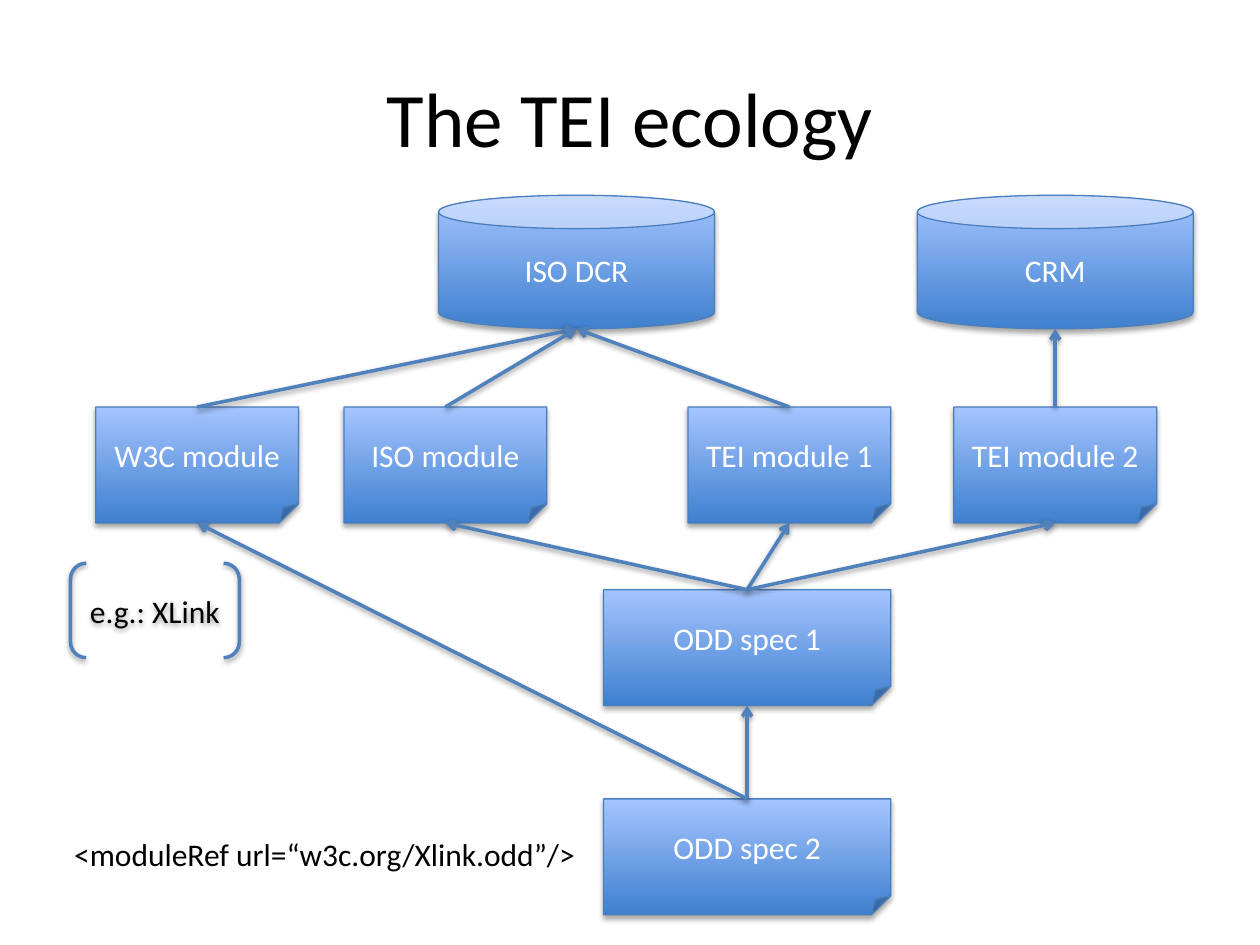
from lxml import etree
from pptx import Presentation
from pptx import util as u
from pptx.dml.color import RGBColor
from pptx.enum import shapes, text
from pptx.oxml.ns import qn

COLS, ROWS = 100, 75
CELL = u.Inches(0.1)


def rgb(value):
    return RGBColor.from_string(value)


def grid(cells):
    return u.Emu(round(cells * CELL))


class Diagram:
    font, ink, light = "Calibri", "000000", "FFFFFF"
    gradient = ("3F80CE", "A4C4FF")
    edge, accent = "4B7EBC", "4F81BD"

    def __init__(self, prs):
        self.s = prs.slides.add_slide(prs.slide_layouts[6])

    def set_text(self, sp, words, size=18, color=ink, align=text.PP_ALIGN.CENTER,
                 anchor=text.MSO_ANCHOR.MIDDLE, wrap=True):
        tf = sp.text_frame
        tf.word_wrap, tf.vertical_anchor = wrap, anchor
        p = tf.paragraphs[0]
        p.alignment = align
        r = p.add_run()
        r.text = words
        for name, value in {"name": self.font, "size": u.Pt(size)}.items():
            setattr(r.font, name, value)
        r.font.color.rgb = rgb(color)

    def stroke(self, sp, color, width):
        sp.line.color.rgb = rgb(color)
        sp.line.width = u.Pt(width)

    def shadow(self, sp, distance, opacity):
        """Give the shape a soft shadow straight below it."""
        sp_pr = sp._element.spPr
        effects = sp_pr.find(qn("a:effectLst"))
        if effects is None:
            effects = etree.SubElement(sp_pr, qn("a:effectLst"))
        outer = etree.SubElement(effects, qn("a:outerShdw"), blurRad="40000",
                                 dist=str(distance), dir="5400000", rotWithShape="0")
        color = etree.SubElement(outer, qn("a:srgbClr"), val=self.ink)
        etree.SubElement(color, qn("a:alpha"), val=str(opacity * 1000))

    def label(self, words, box, **style):
        sp = self.s.shapes.add_textbox(*map(grid, box))
        self.set_text(sp, words, **style)
        return sp

    def shape(self, kind, box):
        sp = self.s.shapes.add_shape(kind, *map(grid, box))
        sp.shadow.inherit = False
        return sp

    def block(self, kind, words, box):
        sp = self.shape(kind, box)
        sp.fill.gradient()
        sp.fill.gradient_angle = 90
        for stop, color in zip(sp.fill.gradient_stops, self.gradient):
            stop.color.rgb = rgb(color)
        self.stroke(sp, self.edge, 0.75)
        self.shadow(sp, 23000, 35)
        self.set_text(sp, words, color=self.light)
        return sp

    def document(self, words, left, top, width):
        return self.block(shapes.MSO_SHAPE.FOLDED_CORNER, words, (left, top, width, 9.2))

    def store(self, words, left):
        return self.block(shapes.MSO_SHAPE.CAN, words, (left, 15.5, 21.9, 10.6))

    def brackets(self, words, box):
        sp = self.shape(shapes.MSO_SHAPE.DOUBLE_BRACKET, box)
        sp.fill.background()
        self.stroke(sp, self.accent, 2)
        self.shadow(sp, 20000, 38)
        self.set_text(sp, words)

    def arrow(self, lower, upper):
        """Point from the top of one shape to the bottom of another."""
        start = lower.left + lower.width // 2, lower.top
        end = upper.left + upper.width // 2, upper.top + upper.height
        c = self.s.shapes.add_connector(shapes.MSO_CONNECTOR.STRAIGHT, *start, *end)
        self.stroke(c, self.accent, 2)
        etree.SubElement(c._element.spPr.find(qn("a:ln")), qn("a:tailEnd"), type="arrow")
        self.shadow(c, 20000, 38)


def main():
    prs = Presentation()
    prs.slide_width, prs.slide_height = grid(COLS), grid(ROWS)
    d = Diagram(prs)

    d.label("The TEI ecology", (5, 3, 90, 12.5), size=44)
    dcr, crm = (d.store(*item) for item in (("ISO DCR", 34.8), ("CRM", 72.8)))
    w3c, iso, tei1, tei2 = (
        d.document(words, left, 32.3, 16.1) for words, left in (
            ("W3C module", 7.6), ("ISO module", 27.3),
            ("TEI module 1", 54.6), ("TEI module 2", 75.7)))
    odd1, odd2 = (d.document(words, 47.9, top, 22.8) for words, top in (
        ("ODD spec 1", 46.8), ("ODD spec 2", 63.4)))

    for lower, upper in ((odd2, odd1), (odd1, tei1), (odd1, tei2), (odd1, iso),
                         (odd2, w3c), (w3c, dcr), (iso, dcr), (tei1, dcr),
                         (tei2, crm)):
        d.arrow(lower, upper)

    d.brackets("e.g.: XLink", (5.6, 44.7, 13.4, 7.5))
    d.label("<moduleRef url=“w3c.org/Xlink.odd”/>", (4.9, 65.8, 42.2, 4),
            align=text.PP_ALIGN.LEFT, anchor=text.MSO_ANCHOR.TOP, wrap=False)
    prs.save("out.pptx")


if __name__ == "__main__":
    main()
